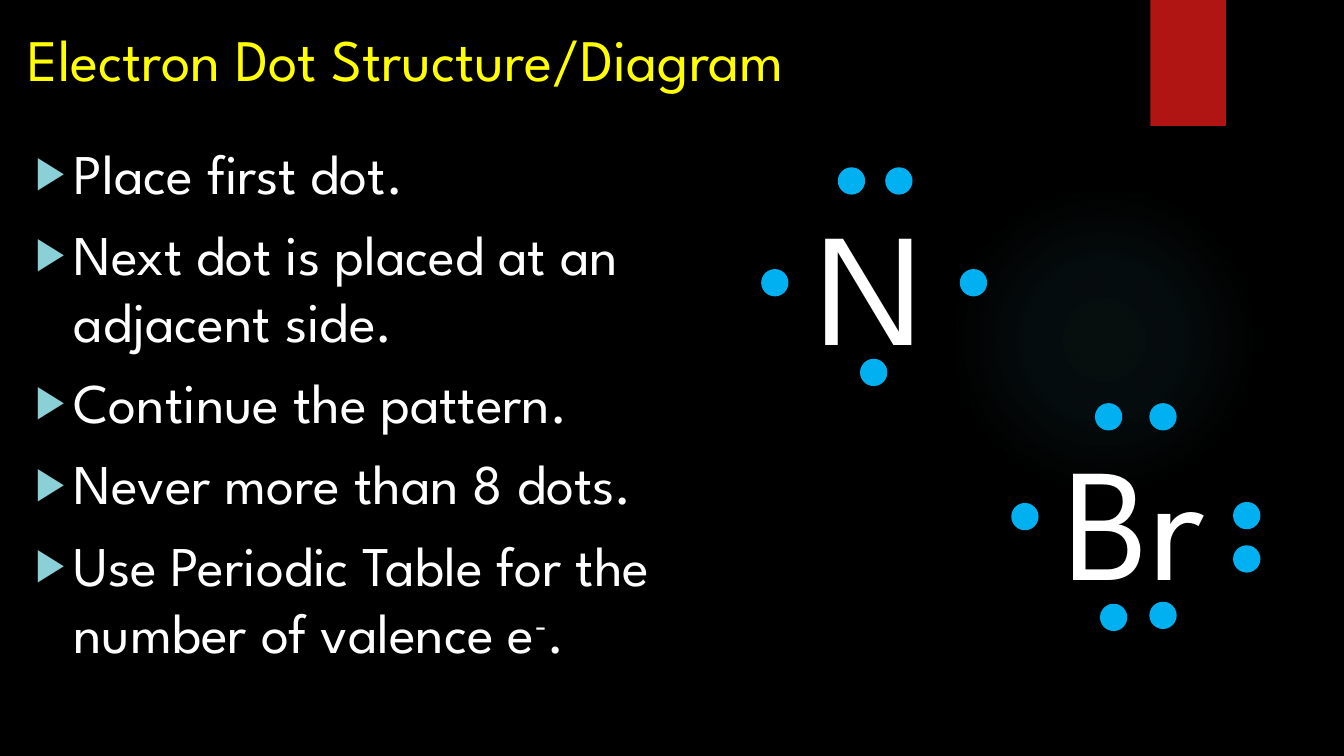
from dataclasses import dataclass

from pptx import Presentation
from pptx.dml.color import RGBColor
from pptx.enum.shapes import MSO_SHAPE
from pptx.enum.text import MSO_ANCHOR, MSO_AUTO_SIZE, PP_ALIGN
from pptx.oxml import parse_xml
from pptx.oxml.ns import nsdecls, qn
from pptx.shapes.autoshape import Shape
from pptx.slide import Slide
from pptx.text.text import TextFrame, _Paragraph
from pptx.util import Inches, Pt

BLACK = RGBColor(0x00, 0x00, 0x00)
WHITE = RGBColor(0xFF, 0xFF, 0xFF)
YELLOW = RGBColor(0xFF, 0xFF, 0x00)
RED = RGBColor(0xB0, 0x15, 0x13)
BLUE = RGBColor(0x00, 0xB0, 0xF0)
TEAL = RGBColor(0x50, 0xB9, 0xC1)
PALE_TEAL = RGBColor(0x8A, 0xD0, 0xD6)
FONT = "League Spartan"
DOT_SIZE = 0.25
INDENT = 0.38


@dataclass(frozen=True)
class Span:
    text: str
    superscript: bool = False


@dataclass(frozen=True)
class Atom:
    """An element symbol and the left and top of each of its dots."""
    symbol: str
    left: float
    top: float
    width: float
    dots: tuple[tuple[float, float], ...]


STEPS = (
    (Span("Place first dot."),),
    (Span("Next dot is placed at an adjacent side."),),
    (Span("Continue the pattern."),),
    (Span("Never more than 8 dots."),),
    (Span("Use Periodic Table for the number of valence e"), Span("-", True), Span(".")),
)
ATOMS = (
    Atom("N", 8, 1.78, 1.34,
         ((8.79, 1.67), (9.53, 2.68), (8.54, 3.57), (7.56, 2.68), (8.32, 1.67))),
    Atom("Br", 10.46, 4.11, 1.69,
         ((11.41, 4.01), (12.24, 4.99), (11.41, 5.98), (10.04, 5),
          (10.87, 4.01), (12.24, 5.42), (10.92, 6))),
)


def place(shape: Shape, left: float, top: float, width: float, height: float) -> None:
    shape.left, shape.top = Inches(left), Inches(top)
    shape.width, shape.height = Inches(width), Inches(height)


def prepare_frame(frame: TextFrame, wrap: bool = True) -> None:
    frame.word_wrap = wrap
    frame.auto_size = MSO_AUTO_SIZE.NONE
    frame.vertical_anchor = MSO_ANCHOR.TOP


def add_span(para: _Paragraph, span: Span, size: float, color: RGBColor) -> None:
    run = para.add_run()
    run.text = span.text
    run.font.name = FONT
    run.font.size = Pt(size)
    run.font.color.rgb = color
    if span.superscript:
        run.font._element.set("baseline", "30000")


def add_bullet(para: _Paragraph) -> None:
    properties = para._p.get_or_add_pPr()
    properties.set("marL", str(Inches(INDENT)))
    properties.set("indent", str(-Inches(INDENT)))
    for markup in (
        f'<a:buClr {nsdecls("a")}><a:srgbClr val="{PALE_TEAL}"/></a:buClr>',
        f'<a:buSzPct {nsdecls("a")} val="80000"/>',
        f'<a:buChar {nsdecls("a")} char="▶"/>',
    ):
        properties.append(parse_xml(markup))


def add_plain_shape(slide: Slide, kind: MSO_SHAPE, left: float, top: float,
                    width: float, height: float, color: RGBColor) -> Shape:
    shape = slide.shapes.add_shape(
        kind, Inches(left), Inches(top), Inches(width), Inches(height))
    shape.shadow.inherit = False
    shape.fill.solid()
    shape.fill.fore_color.rgb = color
    shape.line.fill.background()
    return shape


def add_glow(slide: Slide) -> None:
    """Add the faint circle that fades out from its centre."""
    glow = add_plain_shape(slide, MSO_SHAPE.OVAL, 9.41, 1.83, 3.08, 3.08, TEAL)
    stops = "".join(
        f'<a:gs pos="{position * 1000}"><a:srgbClr val="{TEAL}">'
        f'<a:alpha val="{opacity * 1000}"/></a:srgbClr></a:gs>'
        for position, opacity in ((0, 7), (36, 6), (69, 0)))
    gradient = parse_xml(
        f'<a:gradFill {nsdecls("a")} rotWithShape="1"><a:gsLst>{stops}</a:gsLst>'
        '<a:path path="circle"><a:fillToRect l="50000" t="50000" r="50000" b="50000"/>'
        '</a:path></a:gradFill>')
    properties = glow._element.spPr
    properties.replace(properties.find(qn("a:solidFill")), gradient)


def add_title(slide: Slide) -> None:
    title = slide.shapes.title
    place(title, 0.17, 0.18, 10.29, 0.96)
    prepare_frame(title.text_frame)
    para = title.text_frame.paragraphs[0]
    para.alignment = PP_ALIGN.LEFT
    add_span(para, Span("Electron Dot Structure/Diagram"), 42, YELLOW)


def add_steps(slide: Slide) -> None:
    body = slide.placeholders[1]
    place(body, 0.25, 1.32, 7.53, 5.57)
    frame = body.text_frame
    prepare_frame(frame)
    for index, spans in enumerate(STEPS):
        para = frame.add_paragraph() if index else frame.paragraphs[0]
        add_bullet(para)
        para.space_before = Pt(10 if index else 0)
        for span in spans:
            add_span(para, span, 40, WHITE)


def add_atom(slide: Slide, atom: Atom) -> None:
    box = slide.shapes.add_textbox(
        Inches(atom.left), Inches(atom.top), Inches(atom.width), Inches(2.04))
    prepare_frame(box.text_frame, wrap=False)
    add_span(box.text_frame.paragraphs[0], Span(atom.symbol), 115, WHITE)
    for left, top in atom.dots:
        dot = add_plain_shape(slide, MSO_SHAPE.OVAL, left, top, DOT_SIZE, DOT_SIZE, BLUE)
        dot.line.color.rgb = BLUE
        dot.line.width = Pt(1.5)


def main() -> None:
    deck = Presentation()
    deck.slide_width, deck.slide_height = Inches(13.33), Inches(7.5)
    slide = deck.slides.add_slide(deck.slide_layouts[1])
    slide.background.fill.solid()
    slide.background.fill.fore_color.rgb = BLACK
    add_glow(slide)
    add_plain_shape(slide, MSO_SHAPE.RECTANGLE, 11.41, 0, 0.75, 1.25, RED)
    add_title(slide)
    add_steps(slide)
    for atom in ATOMS:
        add_atom(slide, atom)
    deck.save("out.pptx")


if __name__ == "__main__":
    main()
